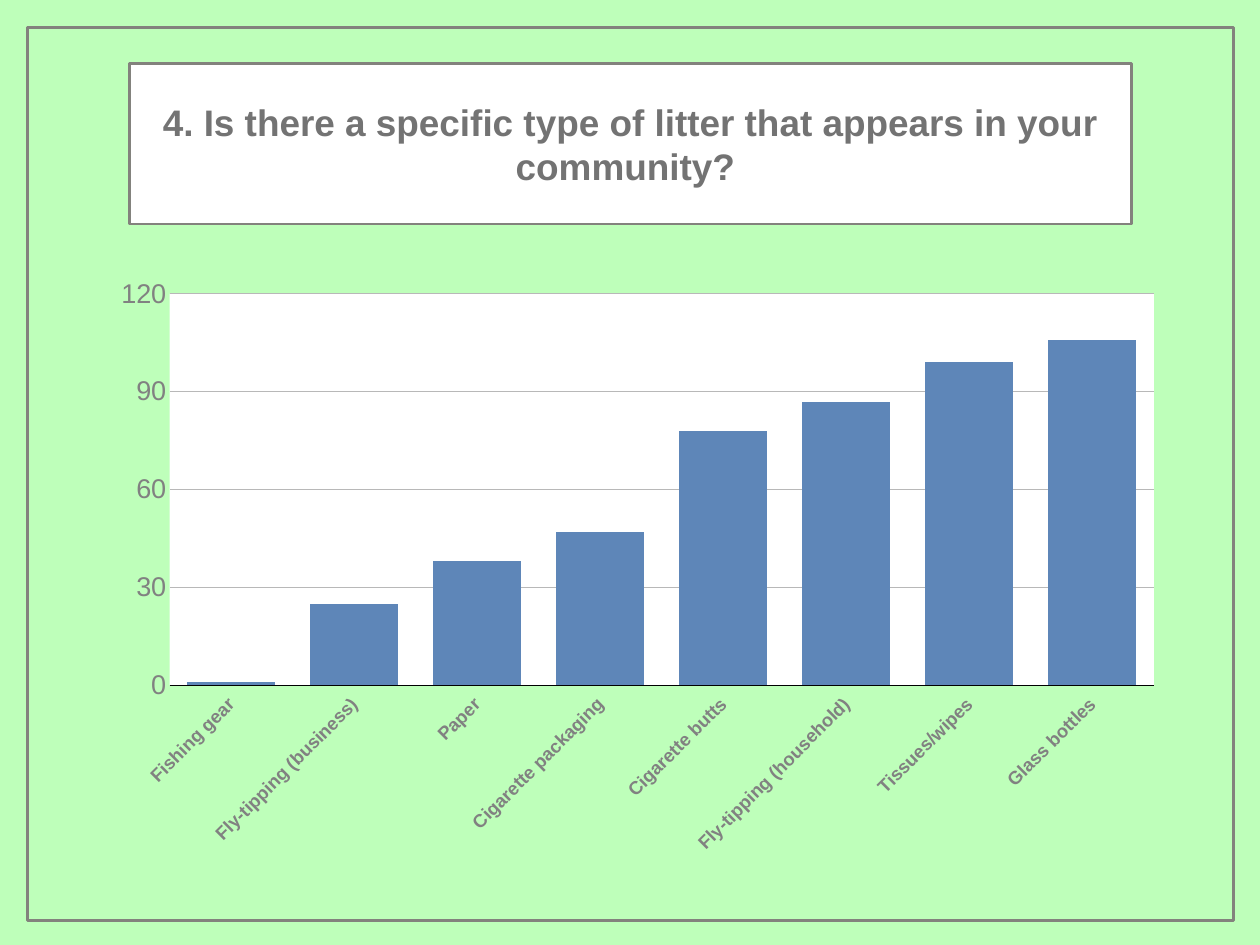
from lxml import etree
from pptx import Presentation, util as u
from pptx.chart.data import CategoryChartData
from pptx.dml.color import RGBColor
from pptx.enum import chart as ch, shapes, text
from pptx.oxml import parse_xml
from pptx.oxml.ns import nsdecls, qn

WIDTH, HEIGHT = 14.22, 10.67
FONT = "Arial"
COLORS = {
    "background": "BEFFBA", "panel": "FFFFFF", "border": "83827D",
    "title": "737373", "labels": "818181", "grid": "B8B8B8",
    "axis": "000000", "bars": "5E86B8",
}
LITTER = {
    "Fishing gear": 1, "Fly-tipping (business)": 25, "Paper": 38,
    "Cigarette packaging": 47, "Cigarette butts": 78,
    "Fly-tipping (household)": 87, "Tissues/wipes": 99, "Glass bottles": 106,
}


def color(name):
    return RGBColor.from_string(COLORS[name])


class SlideBuilder:
    """Places elements by inches divided into shares of the slide."""

    def __init__(self, prs):
        self.prs = prs
        self.s = prs.slides.add_slide(prs.slide_layouts[6])
        fill = self.s.background.fill
        fill.solid()
        fill.fore_color.rgb = color("background")

    def area(self, left, top, width, height):
        w, h = self.prs.slide_width, self.prs.slide_height
        return [u.Emu(round(v)) for v in (left * w, top * h, width * w, height * h)]

    def style_font(self, font, size, name, bold=False):
        font.name, font.size, font.bold = FONT, u.Pt(size), bold
        font.color.rgb = color(name)

    def style_line(self, line, name, width):
        line.color.rgb = color(name)
        line.width = u.Pt(width)

    def frame(self, area, fill=None):
        sp = self.s.shapes.add_shape(shapes.MSO_SHAPE.RECTANGLE, *self.area(*area))
        sp.shadow.inherit = False
        if fill:
            sp.fill.solid()
            sp.fill.fore_color.rgb = color(fill)
        else:
            sp.fill.background()
        self.style_line(sp.line, "border", 2)
        return sp

    def title(self, area, words):
        tf = self.frame(area, "panel").text_frame
        tf.word_wrap = True
        tf.vertical_anchor = text.MSO_ANCHOR.MIDDLE
        tf.margin_left = tf.margin_right = u.Inches(0.06)
        tf.margin_top = tf.margin_bottom = u.Inches(0.06)
        p = tf.paragraphs[0]
        p.alignment = text.PP_ALIGN.CENTER
        r = p.add_run()
        r.text = words
        self.style_font(r.font, 30, "title", True)

    def columns(self, area, values, plot_area):
        data = CategoryChartData()
        data.categories = list(values)
        data.add_series("Series 1", list(values.values()))
        chart = self.s.shapes.add_chart(
            ch.XL_CHART_TYPE.COLUMN_CLUSTERED, *self.area(*area), data).chart
        chart.has_legend = chart.has_title = False
        self.style_font(chart.font, 10, "labels")

        # Bars
        plot = chart.plots[0]
        plot.gap_width, plot.overlap = 40, -10
        plot.vary_by_categories = False
        fill = plot.series[0].format.fill
        fill.solid()
        fill.fore_color.rgb = color("bars")

        # Axes
        cat, val = chart.category_axis, chart.value_axis
        for axis in (cat, val):
            axis.major_tick_mark = axis.minor_tick_mark = ch.XL_TICK_MARK.NONE
        self.style_font(cat.tick_labels.font, 15, "labels", True)
        cat.tick_label_position = ch.XL_TICK_LABEL_POSITION.LOW
        cat._element.find(qn("c:txPr")).find(qn("a:bodyPr")).set("rot", "-2700000")
        self.style_line(cat.format.line, "axis", 1)
        self.style_font(val.tick_labels.font, 22, "labels")
        val.minimum_scale, val.maximum_scale, val.major_unit = 0, 120, 30
        val.format.line.fill.background()
        val.has_major_gridlines = True
        self.style_line(val.major_gridlines.format.line, "grid", 1)
        self.place_plot(chart, plot_area)

    def place_plot(self, chart, plot_area):
        box = chart._chartSpace.find(".//" + qn("c:plotArea"))
        for old in box.findall(qn("c:layout")):
            box.remove(old)
        layout = etree.Element(qn("c:layout"))
        manual = etree.SubElement(layout, qn("c:manualLayout"))
        settings = [("layoutTarget", "inner"), ("xMode", "edge"), ("yMode", "edge")]
        for tag, value in settings + list(zip("xywh", plot_area)):
            etree.SubElement(manual, qn("c:" + tag)).set("val", str(value))
        box.insert(0, layout)
        box.append(parse_xml(
            f'<c:spPr {nsdecls("c", "a")}><a:solidFill>'
            f'<a:srgbClr val="{COLORS["panel"]}"/></a:solidFill></c:spPr>'))


def main():
    prs = Presentation()
    prs.slide_width, prs.slide_height = u.Inches(WIDTH), u.Inches(HEIGHT)
    slide = SlideBuilder(prs)

    # Border around the slide
    slide.frame((0.022, 0.029, 0.957, 0.945))

    # Question
    slide.title((0.103, 0.067, 0.795, 0.17),
                "4. Is there a specific type of litter that appears in your community? ")

    # Answers
    slide.columns((0.08, 0.288, 0.84, 0.622), LITTER, (0.065, 0.037, 0.93, 0.666))

    prs.save("out.pptx")


if __name__ == "__main__":
    main()
